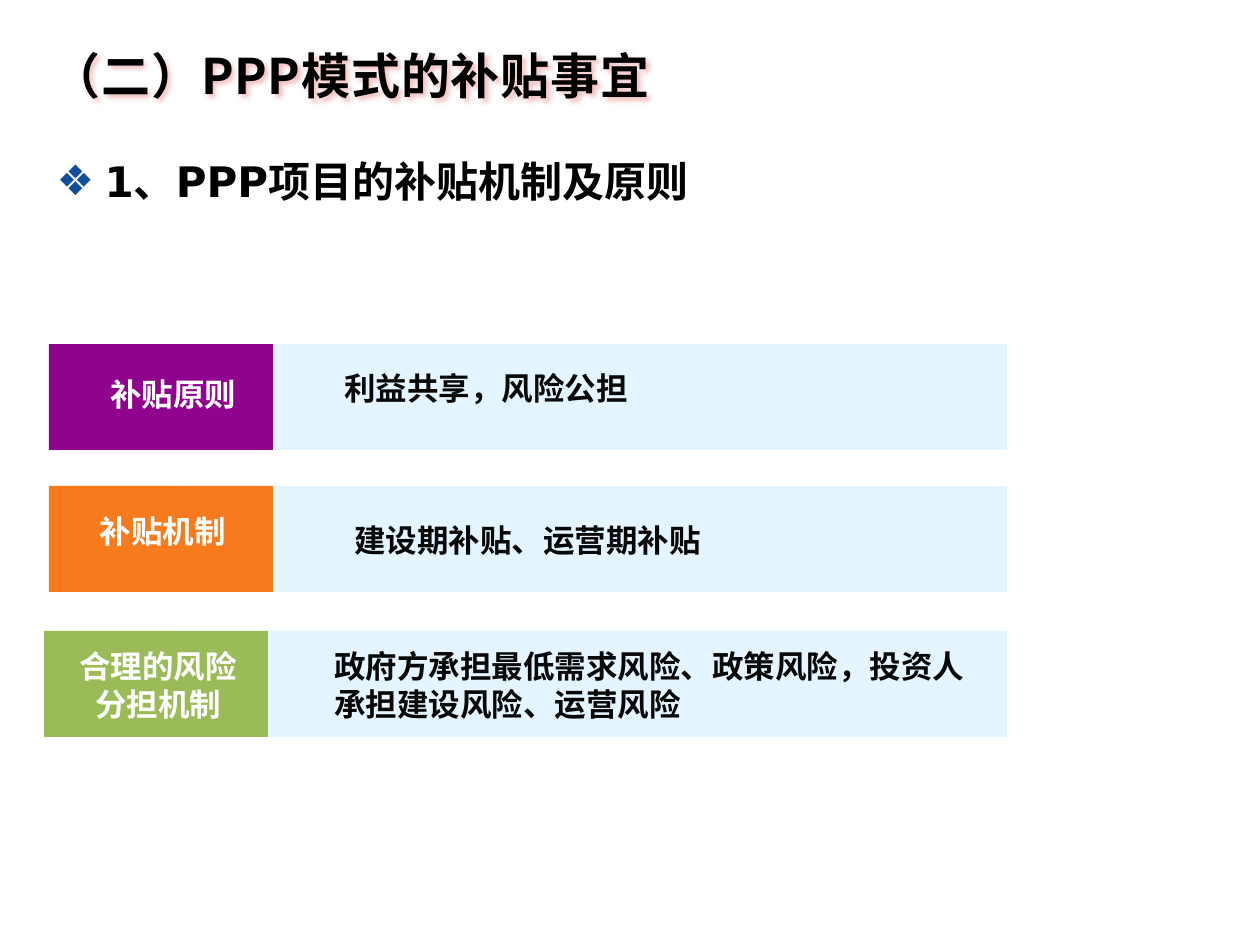
from lxml.etree import SubElement as Sub
from pptx import Presentation
from pptx.dml.color import RGBColor
from pptx.enum.shapes import MSO_SHAPE as Kind
from pptx.enum.text import MSO_ANCHOR as Anchor, MSO_AUTO_SIZE as Fit, PP_ALIGN as Align
from pptx.oxml.ns import qn
from pptx.util import Emu, Pt

CJK = "Noto Sans CJK SC"
INK, WHITE, PALE = "080808", "FFFFFF", "CCECFF"


def px(n):
    return Emu(round(n * 914400 / 126))


def rgb(text):
    return RGBColor.from_string(text)


def tint(parent, color, alpha=100):
    """Add a colour element with an opacity in percent."""
    node = Sub(parent, qn("a:srgbClr"), val=color)
    Sub(node, qn("a:alpha"), val=str(alpha * 1000))


class Deck:
    def __init__(self):
        self.prs = Presentation()
        self.prs.slide_width, self.prs.slide_height = px(1260), px(945)
        self.slide = self.prs.slides.add_slide(self.prs.slide_layouts[1])
        self.shapes = self.slide.shapes

    def place(self, shape, box):
        shape.left, shape.top, shape.width, shape.height = map(px, box)

    def style(self, par, size, color, face="Arial", align=Align.LEFT):
        par.alignment = align
        font = par.font
        font.size, font.bold, font.name = Pt(size), True, face
        font.color.rgb = rgb(color)
        base = par._p.pPr.find(qn("a:defRPr"))
        Sub(base, qn("a:ea"), typeface=CJK)
        return base

    def title(self, text, box):
        shape = self.shapes.title
        self.place(shape, box)
        frame = shape.text_frame
        frame.text, frame.auto_size = text, Fit.NONE
        frame.vertical_anchor = Anchor.MIDDLE
        self.style(frame.paragraphs[0], 28, "000000", CJK).set("spc", "50")
        glow = Sub(Sub(shape._element.spPr, qn("a:effectLst")), qn("a:outerShdw"),
                   blurRad=str(px(5)), dist=str(px(3)), dir="2700000")
        tint(glow, "E06060", 40)

    def body(self, text, box):
        shape = self.slide.placeholders[1]
        self.place(shape, box)
        frame = shape.text_frame
        frame.text, frame.auto_size = text, Fit.NONE
        par = frame.paragraphs[0]
        par.line_spacing, par.space_before = 0.9, Pt(0)
        props = par._p.get_or_add_pPr()
        props.set("marL", str(px(48)))
        props.set("indent", str(px(-48)))
        tint(Sub(props, qn("a:buClr")), "114F9B")
        Sub(props, qn("a:buChar"), char="❖")
        self.style(par, 24, "000000", "DejaVu Sans")

    def rect(self, box, color, alpha=100):
        shape = self.shapes.add_shape(Kind.RECTANGLE, *map(px, box))
        shape.shadow.inherit = False
        shape.line.fill.background()
        shape.fill.solid()
        shape.fill.fore_color.rgb = rgb(color)
        if alpha < 100:
            node = shape._element.spPr.find(qn("a:solidFill"))[0]
            Sub(node, qn("a:alpha"), val=str(alpha * 1000))

    def text(self, text, box, color, align=Align.LEFT):
        frame = self.shapes.add_textbox(*map(px, box)).text_frame
        frame.word_wrap = True
        frame.text = text
        self.style(frame.paragraphs[0], 18, color, align=align)

    def row(self, left, top, color, label, label_box, note, note_box):
        """Draw a pale bar with a coloured label block at its left end."""
        start = left + 129
        self.rect((start, top, 1007 - start, 106), PALE, 50)
        self.rect((left, top, 224, 106), color)
        self.text(label, label_box, WHITE, Align.CENTER)
        self.text(note, note_box, INK)


def main():
    deck = Deck()
    deck.title("（二）PPP模式的补贴事宜", (39, 39, 888, 72))
    deck.body("1、PPP项目的补贴机制及原则", (44, 155, 873, 54))
    rows = [
        (49, 344, "8F038F", "补贴原则", (84, 369, 179, 50),
         "利益共享，风险公担", (332, 363, 380, 50)),
        (49, 486, "F77A1D", "补贴机制", (84, 506, 157, 50),
         "建设期补贴、运营期补贴", (342, 515, 476, 50)),
        (44, 631, "9BBB59", "合理的风险分担机制", (54, 641, 208, 89),
         "政府方承担最低需求风险、政策风险，投资人承担建设风险、运营风险",
         (322, 641, 655, 89)),
    ]
    for row in rows:
        deck.row(*row)
    deck.prs.save("out.pptx")


if __name__ == "__main__":
    main()
